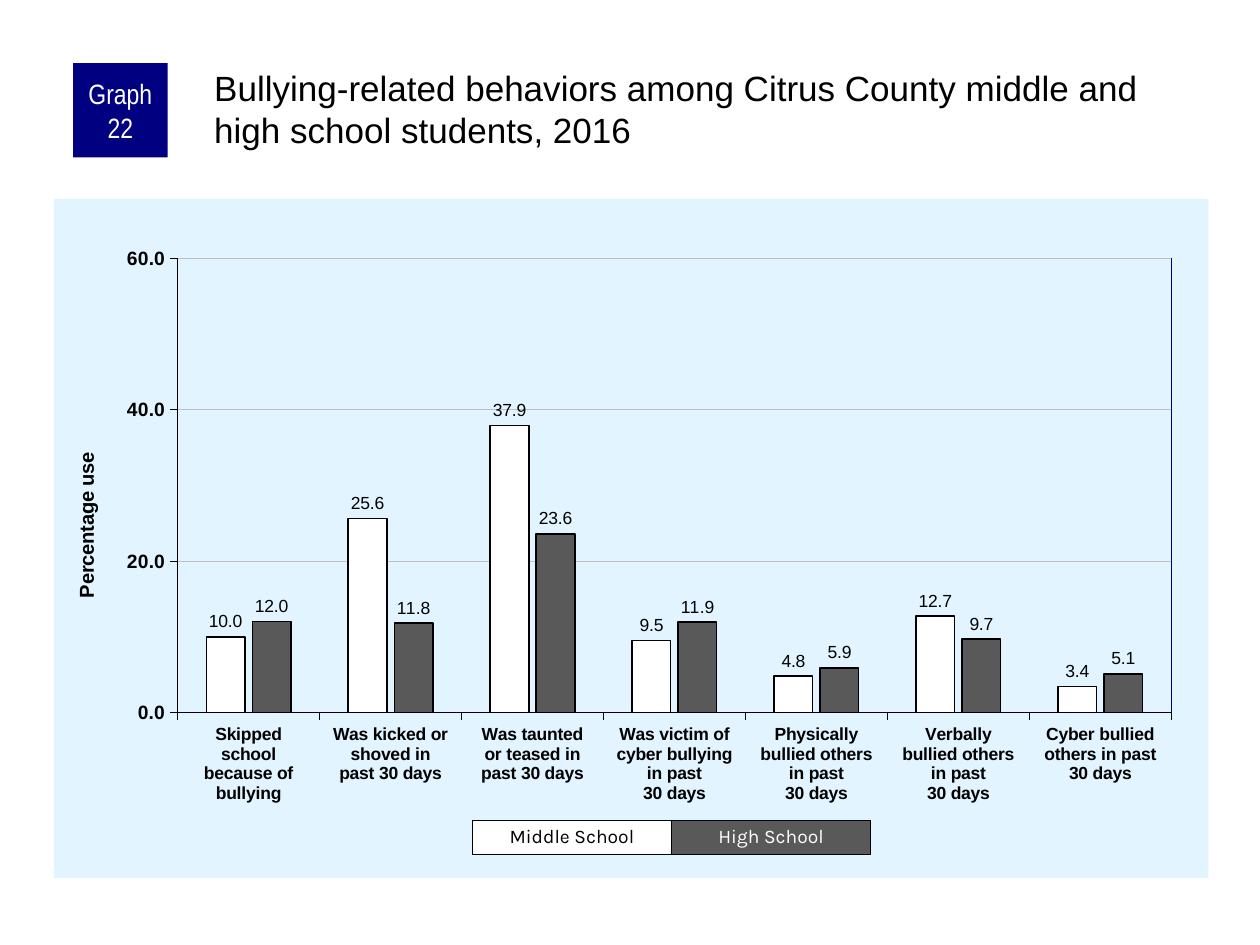
from dataclasses import dataclass

from lxml import etree
from pptx import Presentation
from pptx.chart.data import CategoryChartData
from pptx.dml.color import RGBColor
from pptx.enum.chart import XL_CHART_TYPE, XL_LABEL_POSITION, XL_TICK_MARK
from pptx.enum.shapes import MSO_CONNECTOR, MSO_SHAPE
from pptx.enum.text import MSO_ANCHOR, PP_ALIGN
from pptx.oxml import parse_xml
from pptx.oxml.ns import nsdecls, qn
from pptx.util import Inches, Pt

CLUSTERED = XL_CHART_TYPE.COLUMN_CLUSTERED
OUTSIDE_END = XL_LABEL_POSITION.OUTSIDE_END
TICK_OUTSIDE, TICK_NONE = XL_TICK_MARK.OUTSIDE, XL_TICK_MARK.NONE
RECTANGLE = MSO_SHAPE.RECTANGLE
STRAIGHT = MSO_CONNECTOR.STRAIGHT
MIDDLE, CENTER = MSO_ANCHOR.MIDDLE, PP_ALIGN.CENTER


@dataclass(frozen=True)
class Theme:
    black: RGBColor = RGBColor.from_string("000000")
    white: RGBColor = RGBColor.from_string("FFFFFF")
    navy: RGBColor = RGBColor.from_string("000080")
    gray: RGBColor = RGBColor.from_string("595959")
    grid: RGBColor = RGBColor.from_string("C0C0C0")
    panel: str = "E1F4FF"
    font: str = "Arial"
    badge_font: str = "Arial Narrow"
    legend_font: str = "Karla"
    title_size: Pt = Pt(20)
    badge_size: Pt = Pt(16)
    axis_title_size: Pt = Pt(11.5)
    value_size: Pt = Pt(11)
    label_size: Pt = Pt(10)
    legend_size: Pt = Pt(11)


theme = Theme()


def style_font(font, name, size, color, bold=False):
    font.name, font.size, font.bold = name, size, bold
    font.color.rgb = color


def add_box(left, top, width, height, fill, text):
    """Add a borderless filled rectangle with centred text."""
    shape = slide.shapes.add_shape(
        RECTANGLE, Inches(left), Inches(top), Inches(width), Inches(height))
    shape.shadow.inherit = False
    shape.fill.solid()
    shape.fill.fore_color.rgb = fill
    shape.line.fill.background()
    shape.text_frame.text = text
    shape.text_frame.word_wrap = True
    shape.text_frame.vertical_anchor = MIDDLE
    shape.text_frame.paragraphs[0].alignment = CENTER
    return shape


presentation = Presentation()
presentation.slide_width, presentation.slide_height = Inches(10), Inches(7.5)
slide = presentation.slides.add_slide(presentation.slide_layouts[6])

# Chart
chart_left, chart_top, chart_width, chart_height = 0.43, 1.58, 9.16, 5.39
plot = {"x": 0.107, "y": 0.087, "w": 0.861, "h": 0.669}

behaviors = [
    # category, middle school, high school
    ("Skipped\nschool\nbecause of\nbullying", 10.0, 12.0),
    ("Was kicked or\nshoved in\npast 30 days", 25.6, 11.8),
    ("Was taunted\nor teased in\npast 30 days", 37.9, 23.6),
    ("Was victim of\ncyber bullying\nin past\n30 days", 9.5, 11.9),
    ("Physically\nbullied others\nin past\n30 days", 4.8, 5.9),
    ("Verbally\nbullied others\nin past\n30 days", 12.7, 9.7),
    ("Cyber bullied\nothers in past\n30 days", 3.4, 5.1),
]
categories, middle_school, high_school = zip(*behaviors)
schools = [
    ("Middle School", middle_school, theme.white, theme.black),
    ("High School", high_school, theme.gray, theme.white),
]

chart_data = CategoryChartData(number_format="0.0")
chart_data.categories = categories
for name, values, _, _ in schools:
    chart_data.add_series(name, values)
chart = slide.shapes.add_chart(
    CLUSTERED, Inches(chart_left), Inches(chart_top),
    Inches(chart_width), Inches(chart_height), chart_data).chart
chart.has_legend = False
chart.has_title = False
style_font(chart.font, theme.font, theme.axis_title_size, theme.black)

columns = chart.plots[0]
columns.gap_width, columns.overlap = 150, -20
columns.vary_by_categories = False
for series, (_, _, fill, _) in zip(columns.series, schools):
    series.format.fill.solid()
    series.format.fill.fore_color.rgb = fill
    series.format.line.color.rgb = theme.black
    series.format.line.width = Pt(1)
    labels = series.data_labels
    labels.show_value = True
    labels.number_format, labels.number_format_is_linked = "0.0", False
    labels.position = OUTSIDE_END
    style_font(labels.font, theme.font, theme.label_size, theme.black)

category_axis, value_axis = chart.category_axis, chart.value_axis
for axis, size in ((category_axis, theme.label_size), (value_axis, theme.value_size)):
    axis.major_tick_mark, axis.minor_tick_mark = TICK_OUTSIDE, TICK_NONE
    axis.format.line.color.rgb = theme.black
    axis.format.line.width = Pt(0.25)
    style_font(axis.tick_labels.font, theme.font, size, theme.black, bold=True)

value_axis.minimum_scale, value_axis.maximum_scale = 0, 60
value_axis.major_unit = 20
value_axis.tick_labels.number_format = "0.0"
value_axis.tick_labels.number_format_is_linked = False
value_axis.has_major_gridlines = True
value_axis.major_gridlines.format.line.color.rgb = theme.grid
value_axis.major_gridlines.format.line.width = Pt(0.25)
axis_title = value_axis.axis_title.text_frame
axis_title.text = "Percentage use"
style_font(axis_title.paragraphs[0].runs[0].font, theme.font,
           theme.axis_title_size, theme.black, bold=True)

# Panel fill and fixed inner plot area
chart_space = chart.element
chart_space.find(qn("c:chart")).addnext(parse_xml(
    f'<c:spPr {nsdecls("c", "a")}><a:solidFill><a:srgbClr val="{theme.panel}"/>'
    '</a:solidFill><a:ln><a:noFill/></a:ln></c:spPr>'))
plot_area = chart_space.find(".//" + qn("c:plotArea"))
for layout in plot_area.findall(qn("c:layout")):
    plot_area.remove(layout)
layout = etree.Element(qn("c:layout"))
manual = etree.SubElement(layout, qn("c:manualLayout"))
settings = {"layoutTarget": "inner", "xMode": "edge", "yMode": "edge", **plot}
for tag, value in settings.items():
    etree.SubElement(manual, qn(f"c:{tag}")).set("val", str(value))
plot_area.insert(0, layout)

# Right edge of the plot
edge_x = Inches(chart_left + chart_width * (plot["x"] + plot["w"]))
edge_top = chart_top + chart_height * plot["y"]
edge = slide.shapes.add_connector(
    STRAIGHT, edge_x, Inches(edge_top),
    edge_x, Inches(edge_top + chart_height * plot["h"]))
edge.line.color.rgb = theme.navy
edge.line.width = Pt(1)
etree.SubElement(edge.element.spPr, qn("a:effectLst"))

# Heading
badge = add_box(0.58, 0.5, 0.75, 0.75, theme.navy, "Graph 22")
frame = badge.text_frame
frame.margin_left = frame.margin_right = Inches(0.05)
frame.margin_top = frame.margin_bottom = 0
style_font(frame.paragraphs[0].runs[0].font, theme.badge_font,
           theme.badge_size, theme.white)

title = slide.shapes.add_textbox(Inches(1.67), Inches(0.5), Inches(7.92), Inches(0.83))
frame = title.text_frame
frame.word_wrap = True
frame.margin_left = frame.margin_top = Inches(0.03)
frame.margin_right = frame.margin_bottom = 0
frame.text = ("Bullying-related behaviors among Citrus County middle and "
              "high school students, 2016")
style_font(frame.paragraphs[0].runs[0].font, theme.font, theme.title_size, theme.black)

# Legend
legend_left, legend_width = 3.75, 1.58
for index, (name, _, fill, text_color) in enumerate(schools):
    key = add_box(legend_left + index * legend_width, 6.51, legend_width, 0.27, fill, name)
    key.line.color.rgb = theme.black
    key.line.width = Pt(0.75)
    paragraph = key.text_frame.paragraphs[0]
    paragraph.line_spacing = 0.9
    style_font(paragraph.runs[0].font, theme.legend_font, theme.legend_size, text_color)

presentation.save("out.pptx")
